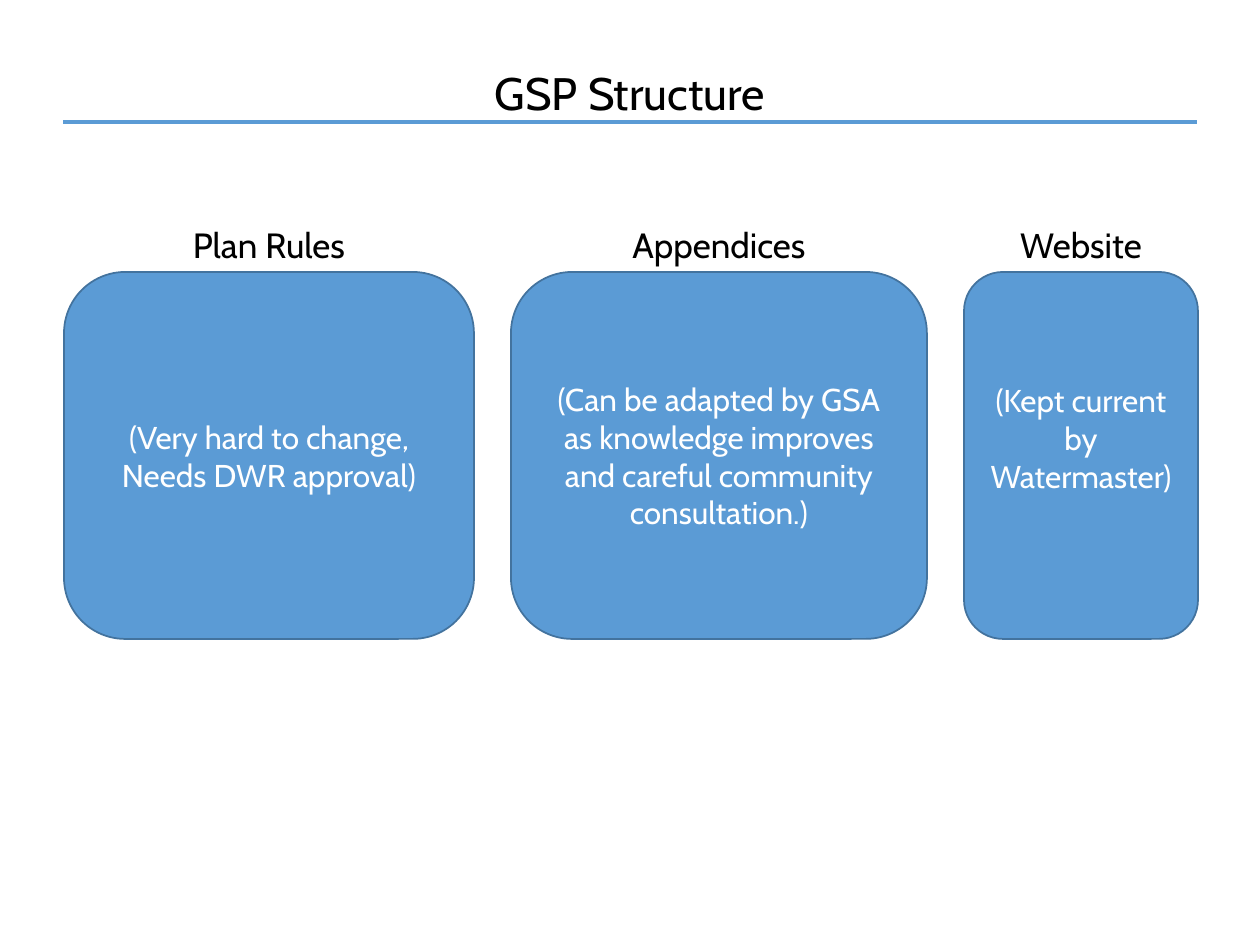
from pptx import Presentation
from pptx import util as u
from pptx.dml.color import RGBColor
from pptx.enum import shapes, text
from pptx.oxml.ns import qn
from lxml import etree

FONT = "Cabin"
COLORS = {"fill": "5B9BD5", "outline": "43739E", "ink": "000000", "light": "FFFFFF"}
CAPTION_W, CAPTION_H = 199, 55
COLUMNS = [
    ("Plan Rules", "(Very hard to change,\nNeeds DWR approval)", 410, 6),
    ("Appendices", "(Can be adapted by GSA as knowledge improves and "
     "careful community consultation.)", 416, 6),
    ("Website", "(Kept current by Watermaster)", 234, 41),
]


def px(n):
    """Turn pixels at 126 to the inch into EMU."""
    return u.Emu(round(n * 914400 / 126))


def color(name):
    """Look up a named colour."""
    return RGBColor.from_string(COLORS[name])


def write(sp, words, size, ink):
    """Put one centred paragraph into a shape."""
    tf = sp.text_frame
    tf.word_wrap = True
    p = tf.paragraphs[0]
    p.text = words
    p.alignment = text.PP_ALIGN.CENTER
    p.font.name, p.font.size = FONT, u.Pt(size)
    p.font.color.rgb = color(ink)
    return tf


def add_label(s, x, y, w, h, words, size):
    """Add a centred text box that grows with its text."""
    sp = s.shapes.add_textbox(px(x), px(y), px(w), px(h))
    tf = write(sp, words, size, "ink")
    tf.auto_size = text.MSO_AUTO_SIZE.SHAPE_TO_FIT_TEXT


def add_header(s, x, y, w, h, title):
    """Add the title and the rule that underlines it."""
    rule_y = px(y + h - 5)
    line = s.shapes.add_connector(shapes.MSO_CONNECTOR.STRAIGHT,
                                  px(x), rule_y, px(x + w), rule_y)
    line.line.color.rgb = color("fill")
    line.line.width = u.Pt(2.25)
    etree.SubElement(line._element.spPr, qn("a:effectLst"))
    add_label(s, x, y, w, h, title, 26)


def add_column(s, x, y, w, h, caption, words, bottom):
    """Add a rounded box with its caption centred above."""
    sp = s.shapes.add_shape(shapes.MSO_SHAPE.ROUNDED_RECTANGLE,
                            px(x), px(y), px(w), px(h))
    sp.shadow.inherit = False
    sp.fill.solid()
    sp.fill.fore_color.rgb = color("fill")
    sp.line.color.rgb = color("outline")
    sp.line.width = u.Pt(1)
    tf = write(sp, words, 18, "light")
    tf.vertical_anchor = text.MSO_ANCHOR.MIDDLE
    tf.margin_bottom = px(bottom)
    add_label(s, x + (w - CAPTION_W) / 2, y - CAPTION_H,
              CAPTION_W, CAPTION_H, caption, 20)


def add_columns(s, x, y, h, gap):
    """Lay the columns out from left to right with equal gaps."""
    for caption, words, w, bottom in COLUMNS:
        add_column(s, x, y, w, h, caption, words, bottom)
        x += w + gap


def main():
    """Build and save the slide."""
    prs = Presentation()
    prs.slide_width, prs.slide_height = px(1260), px(945)
    s = prs.slides.add_slide(prs.slide_layouts[6])
    add_header(s, 63, 59, 1134, 68, "GSP Structure")
    add_columns(s, 64, 272, 367, 37)
    prs.save("out.pptx")


if __name__ == "__main__":
    main()
